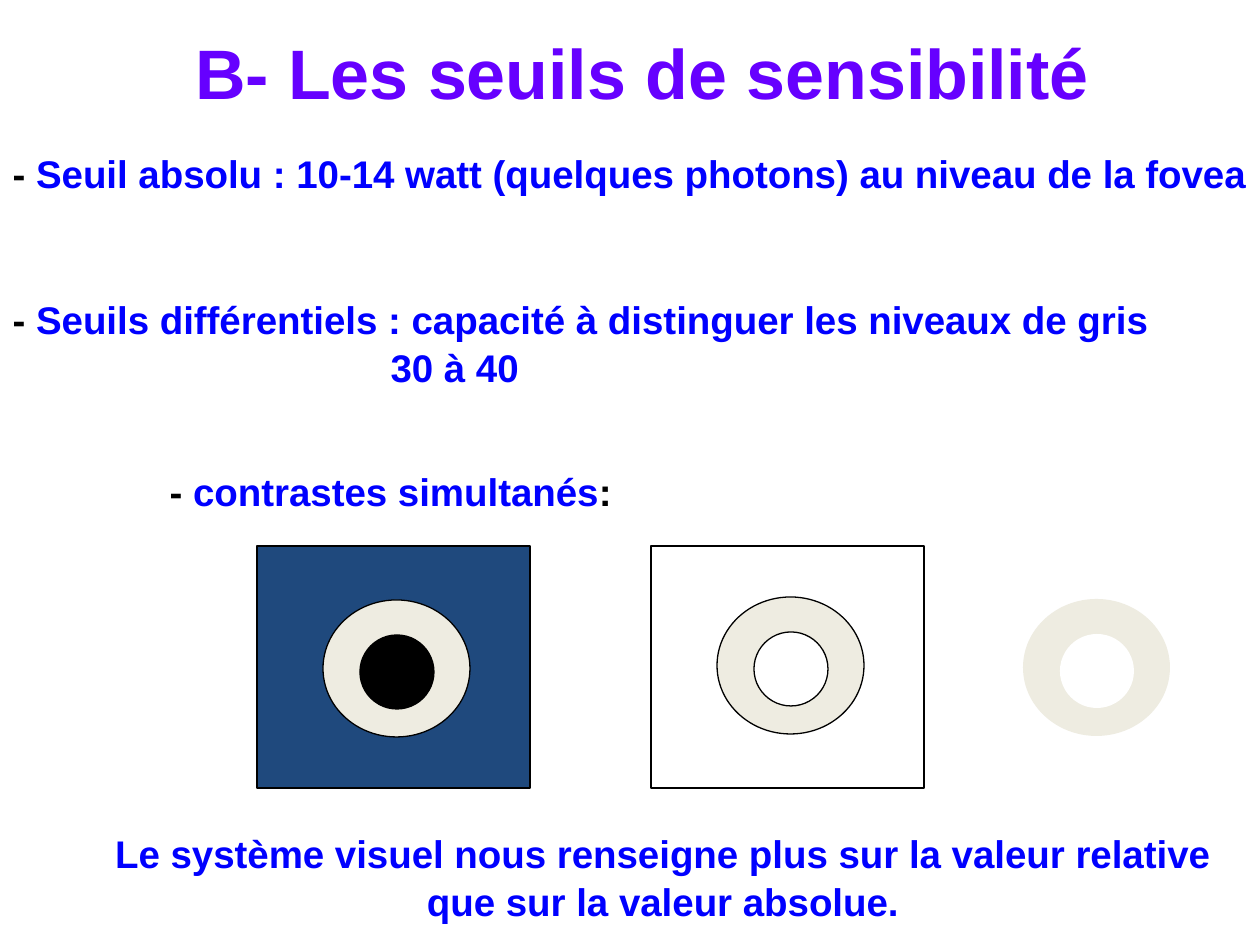
"""Build the slide on thresholds of visual sensitivity."""
from pptx import Presentation
from pptx.dml.color import RGBColor
from pptx.enum.shapes import MSO_SHAPE
from pptx.enum.text import MSO_ANCHOR, MSO_AUTO_SIZE, PP_ALIGN
from pptx.oxml.ns import qn
from pptx.util import Pt

RECTANGLE, OVAL = MSO_SHAPE.RECTANGLE, MSO_SHAPE.OVAL
LEFT, CENTER = PP_ALIGN.LEFT, PP_ALIGN.CENTER
TOP, FIXED = MSO_ANCHOR.TOP, MSO_AUTO_SIZE.NONE
EMU_PER_PX = 914400 / 126
COLORS = {
    "violet": "6600FF",
    "blue": "0000FF",
    "black": "000000",
    "white": "FFFFFF",
    "navy": "1F497D",
    "cream": "EEECE1",
}


def px(length):
    return round(length * EMU_PER_PX)


def rgb(name):
    return RGBColor.from_string(COLORS[name])


def add_run(paragraph, text, size=22, color="blue"):
    run = paragraph.add_run()
    run.text = text
    run.font.name = "Arial"
    run.font.size = Pt(size)
    run.font.bold = True
    run.font.color.rgb = rgb(color)


class SlideBuilder:
    def __init__(self, slide):
        self.slide = slide

    def fill_frame(self, shape, box, paragraphs, align=LEFT, size=22):
        shape.left, shape.top, shape.width, shape.height = map(px, box)
        frame = shape.text_frame
        frame.word_wrap = True
        frame.auto_size = FIXED
        frame.vertical_anchor = TOP
        frame.margin_right = 0 if align == LEFT else frame.margin_left
        for index, (runs, before, indent) in enumerate(paragraphs):
            paragraph = frame.add_paragraph() if index else frame.paragraphs[0]
            paragraph.alignment = align
            paragraph.line_spacing = 1.04
            paragraph.space_before = Pt(before)
            properties = paragraph._p.get_or_add_pPr()
            properties.set("marL", str(px(indent)))
            properties.set("indent", "0")
            properties.append(properties.makeelement(qn("a:buNone"), {}))
            for text, color in runs:
                add_run(paragraph, text, size=size, color=color)

    def title(self, text, box):
        self.fill_frame(self.slide.shapes.title, box, [([(text, "violet")], 0, 0)], CENTER, 40)

    def body(self, paragraphs, box):
        self.fill_frame(self.slide.placeholders[1], box, paragraphs)

    def caption(self, lines, box):
        shape = self.slide.shapes.add_textbox(*map(px, box))
        self.fill_frame(shape, box, [([(line, "blue")], 0, 0) for line in lines], CENTER)

    def figure(self, kind, box, fill, outlined=True):
        shape = self.slide.shapes.add_shape(kind, *map(px, box))
        shape.shadow.inherit = False
        shape.fill.solid()
        shape.fill.fore_color.rgb = rgb(fill)
        if outlined:
            shape.line.color.rgb = rgb("black")
            shape.line.width = Pt(0.75)
        else:
            shape.line.fill.background()

    def ring(self, left, top, center, outlined=True):
        self.figure(OVAL, (left, top, 147, 137), "cream", outlined)
        self.figure(OVAL, (left + 37, top + 35, 74, 74), center, outlined)


def main():
    presentation = Presentation()
    presentation.slide_width, presentation.slide_height = px(1260), px(945)
    builder = SlideBuilder(presentation.slides.add_slide(presentation.slide_layouts[1]))
    builder.title("B- Les seuils de sensibilité", (44, 20, 1196, 97))
    dash = ("- ", "black")
    builder.body(
        [
            ([dash, ("Seuil absolu : 10-14 watt (quelques photons) au niveau de la fovea", "blue")], 0, 0),
            ([dash, ("Seuils différentiels : capacité à distinguer les niveaux de gris", "blue")], 56, 0),
            ([("30 à 40", "blue")], 0, 378),
            ([dash, ("contrastes simultanés", "blue"), (":", "black")], 43.5, 157),
        ],
        (0, 142, 1260, 370),
    )
    builder.caption(
        ["Le système visuel nous renseigne plus sur la valeur relative", "que sur la valeur absolue."],
        (84, 822, 1158, 106),
    )
    for left, fill in ((257, "navy"), (651, "white")):
        builder.figure(RECTANGLE, (left, 546, 273, 242), fill)
    builder.ring(323, 600, "black")
    builder.ring(717, 597, "white")
    builder.ring(1023, 599, "white", outlined=False)
    presentation.save("out.pptx")


if __name__ == "__main__":
    main()
